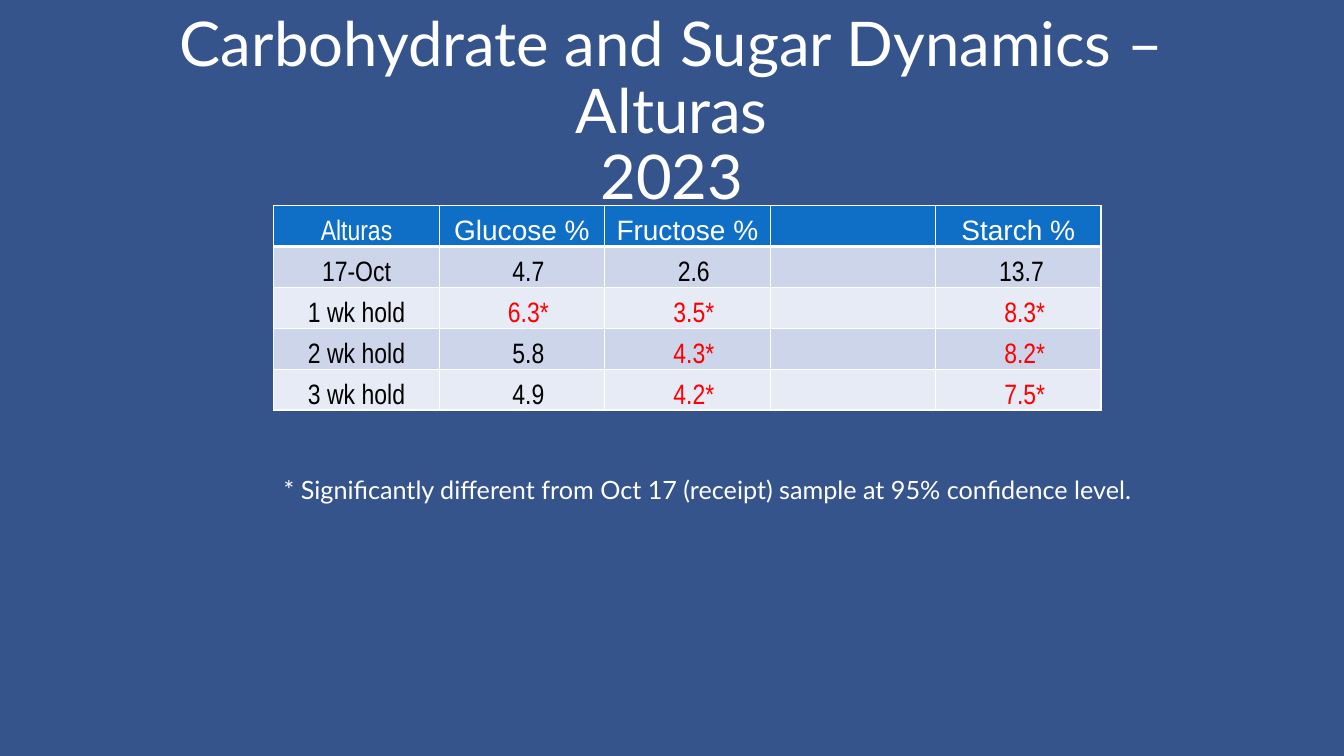
from lxml import etree
from pptx import Presentation
from pptx.dml.color import RGBColor
from pptx.enum.text import MSO_ANCHOR, PP_ALIGN
from pptx.oxml.ns import qn
from pptx.util import Pt

LEFT, CENTER = PP_ALIGN.LEFT, PP_ALIGN.CENTER
TOP, MIDDLE, BOTTOM = MSO_ANCHOR.TOP, MSO_ANCHOR.MIDDLE, MSO_ANCHOR.BOTTOM

COLORS = {"back": "36548C", "white": "FFFFFF", "black": "000000", "red": "FF0000",
          "head": "0F6FC6", "odd": "CCD5EA", "even": "E7EBF5"}
SPACE = 4.55  # width of one space in the table's text


def write(frame, text, size, font, color, align=CENTER, spacing=1.0):
    para = frame.paragraphs[0]
    para.alignment = align
    para.line_spacing = spacing
    for i, line in enumerate(text.split("\n")):
        if i:
            para.add_line_break()
        run = para.add_run()
        run.text = line
        run.font.size = Pt(size)
        run.font.name = font
        run.font.color.rgb = RGBColor.from_string(COLORS[color])


def edge(cell, side, width):
    """Draw a white border on one side of a cell."""
    line = etree.SubElement(cell._tc.get_or_add_tcPr(), qn(f"a:ln{side}"), w=str(Pt(width)))
    fill = etree.SubElement(line, qn("a:solidFill"))
    etree.SubElement(fill, qn("a:srgbClr"), val=COLORS["white"])


deck = Presentation()
deck.slide_width, deck.slide_height = Pt(960), Pt(540)
slide = deck.slides.add_slide(deck.slide_layouts[6])
slide.background.fill.solid()
slide.background.fill.fore_color.rgb = RGBColor.from_string(COLORS["back"])

# Title
title = slide.shapes.add_textbox(Pt(66), Pt(28.8), Pt(828), Pt(104.4)).text_frame
title.word_wrap = True
title.vertical_anchor = MIDDLE
write(title, "Carbohydrate and Sugar Dynamics – Alturas\n2023", 44, "Lato", "white", spacing=0.9)

# Table of sugars and starch
rows = [
    ["Alturas", "Glucose %", "Fructose %", "", "Starch %"],
    ["17-Oct", "4.7", "2.6", "", "13.7"],
    ["1 wk hold", "6.3*", "3.5*", "", "8.3*"],
    ["2 wk hold", "5.8", "4.3*", "", "8.2*"],
    ["3 wk hold", "4.9", "4.2*", "", "7.5*"],
]
table = slide.shapes.add_table(len(rows), len(rows[0]), Pt(195.6), Pt(146.9),
                               Pt(591), Pt(146)).table
table.first_row = table.horz_banding = False
for col in table.columns:
    col.width = Pt(118.2)
for r, row in enumerate(rows):
    table.rows[r].height = Pt(29.2)
    for c, text in enumerate(row):
        cell = table.cell(r, c)
        indent = 0
        if r and c:
            indent = SPACE * (1 if text == "13.7" else 2)
        cell.margin_left = Pt(0.7 + indent)
        cell.margin_right = cell.margin_top = Pt(0.7)
        cell.margin_bottom = 0
        cell.vertical_anchor = BOTTOM
        for side in "LRTB":
            heavy = (r, side) in [(0, "B"), (1, "T")]
            edge(cell, side, 3 if heavy else 1)
        shade = "head" if r == 0 else "odd" if r % 2 else "even"
        cell.fill.solid()
        cell.fill.fore_color.rgb = RGBColor.from_string(COLORS[shade])
        if text:
            font = "Arial" if r == 0 and c else "Arial Narrow"
            color = "white" if r == 0 else "red" if "*" in text else "black"
            write(cell.text_frame, text, 20, font, color)

# Footnote
note = slide.shapes.add_textbox(Pt(195.6), Pt(335.5), Pt(774.7), Pt(51)).text_frame
note.word_wrap = True
note.vertical_anchor = TOP
write(note, "* Significantly different from Oct 17 (receipt) sample at 95% confidence level.",
      18, "Lato", "white", align=LEFT)

deck.save("out.pptx")
